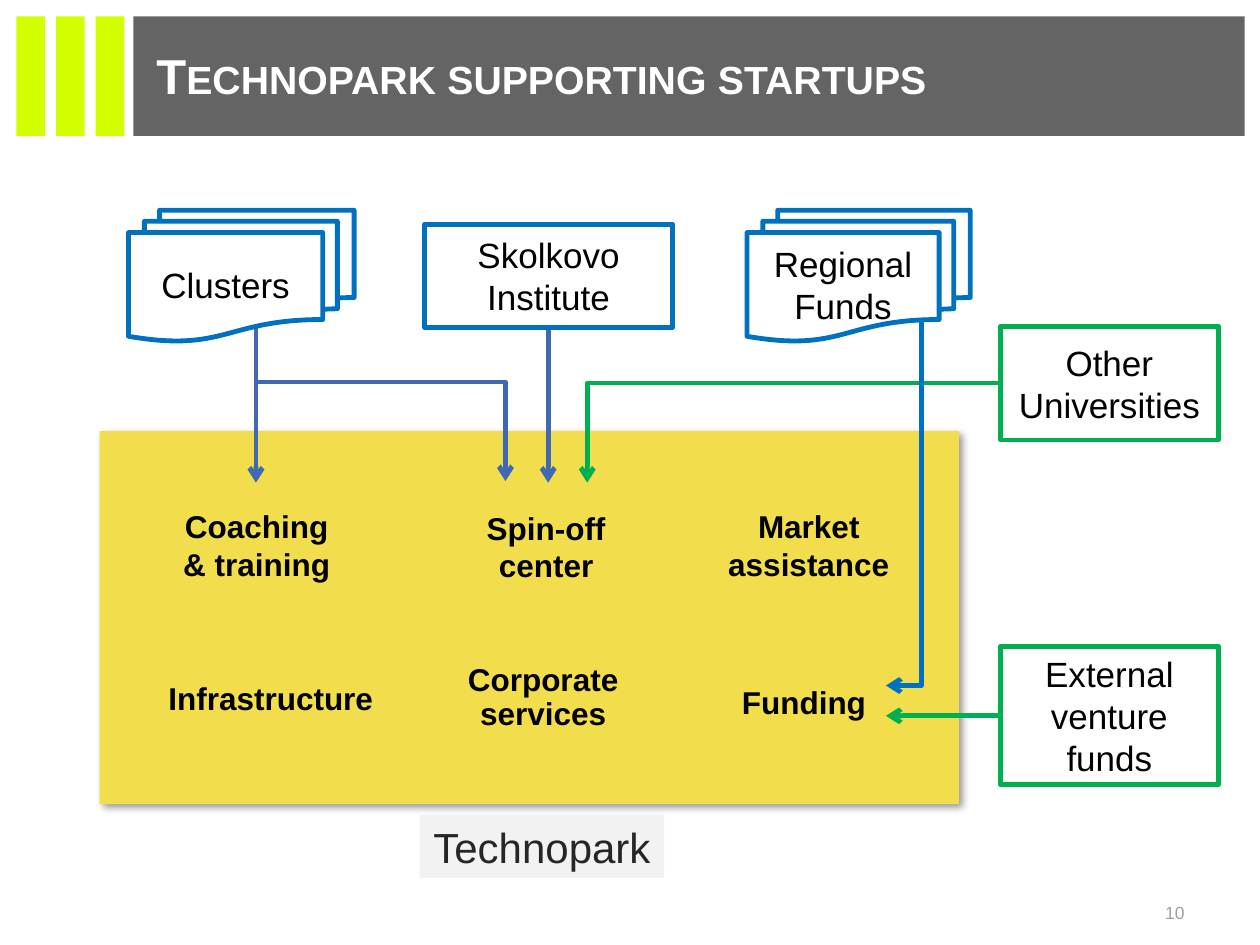
from lxml import etree
from pptx import Presentation
from pptx.dml.color import RGBColor
from pptx.enum.shapes import MSO_CONNECTOR, MSO_SHAPE
from pptx.enum.text import MSO_ANCHOR, PP_ALIGN
from pptx.oxml.ns import qn
from pptx.util import Cm, Pt

RECTANGLE, STACK = MSO_SHAPE.RECTANGLE, MSO_SHAPE.FLOWCHART_MULTIDOCUMENT
STRAIGHT, ELBOW = MSO_CONNECTOR.STRAIGHT, MSO_CONNECTOR.ELBOW
LEFT, CENTER, RIGHT = PP_ALIGN.LEFT, PP_ALIGN.CENTER, PP_ALIGN.RIGHT
MIDDLE = MSO_ANCHOR.MIDDLE

WHITE = RGBColor(0xFF, 0xFF, 0xFF)
BLACK = RGBColor(0, 0, 0)
HEADER_GRAY = RGBColor(0x64, 0x64, 0x64)
LIME = RGBColor(0xD2, 0xFF, 0x00)
YELLOW = RGBColor(0xF2, 0xDE, 0x4C)
BLUE = RGBColor(0x00, 0x70, 0xC0)
ARROW_BLUE = RGBColor(0x3F, 0x69, 0xB2)
GREEN = RGBColor(0x00, 0xB0, 0x50)
CAPTION_FILL = RGBColor(0xF2, 0xF2, 0xF2)
CAPTION_TEXT = RGBColor(0x26, 0x26, 0x26)
NUMBER_GRAY = RGBColor(0x9F, 0xA1, 0xA0)

FONT = "Arial"
LINE_WIDTH = Pt(2.75)

# Positions are (left, top, width, height) in centimetres.
TITLE = "Technopark supporting startups"
TITLE_AREA = (2.9, 0.53, 21.23, 1.96)
HEADER = (2.69, 0.33, 22.4, 2.41)
BARS, BAR_WIDTH, BAR_STEP = 3, 0.58, 0.8
PARK = (2.01, 8.69, 17.32, 7.52)
CAPTION = ("Technopark", (8.46, 16.43, 4.93, 1.27))
PAGE_NUMBER = ("10", (18.21, 18.14, 5.92, 0.53))

PARTNERS = [
    (["External venture funds"], RECTANGLE, (20.17, 13.03, 4.39, 2.79), GREEN),
    (["Other", "Universities"], RECTANGLE, (20.17, 6.58, 4.39, 2.29), GREEN),
    (["Regional Funds"], STACK, (15.06, 4.24, 4.5, 2.64), BLUE),
    (["Skolkovo Institute"], RECTANGLE, (8.56, 4.52, 5, 2.08), BLUE),
    (["Clusters"], STACK, (2.59, 4.24, 4.55, 2.64), BLUE),
]
SERVICES = [
    ("Coaching & training", (3.18, 9.98, 3.99, 2.01), 1),
    ("Spin-off center", (9.12, 10.01, 3.78, 2.01), 1),
    ("Market assistance", (14.3, 9.98, 4.01, 2.01), 1),
    ("Infrastructure", (3.07, 12.85, 4.78, 2.54), 0.9),
    ("Corporate services", (8.56, 12.8, 4.78, 2.54), 0.9),
    ("Funding", (13.82, 12.93, 4.78, 2.54), 0.9),
]
# Start, end, colour
STRAIGHT_ARROWS = [
    ((5.16, 6.58), (5.16, 9.73), ARROW_BLUE),
    ((11.05, 6.58), (11.05, 9.73), ARROW_BLUE),
    ((20.17, 14.43), (17.86, 14.43), GREEN),
]
SIDEWAYS_THEN_DOWN = [
    ((5.18, 7.7), (10.19, 9.7), ARROW_BLUE),
    ((20.17, 7.72), (11.84, 9.73), GREEN),
]
DOWN_THEN_LEFT = ((18.57, 6.43), (17.86, 13.82), BLUE)


def cm(values):
    return [Cm(value) for value in values]


def write(shape, lines, size, color, bold=False, align=CENTER, spacing=None):
    frame = shape.text_frame
    frame.word_wrap = True
    frame.vertical_anchor = MIDDLE
    frame.text = "\n".join(lines)
    for paragraph in frame.paragraphs:
        paragraph.alignment = align
        paragraph.line_spacing = spacing
        font = paragraph.font
        font.name, font.size, font.bold = FONT, Pt(size), bold
        font.color.rgb = color
    return frame


def add_block(page, area, fill, kind=RECTANGLE, line=None):
    shape = page.shapes.add_shape(kind, *cm(area))
    shape.shadow.inherit = False
    shape.fill.solid()
    shape.fill.fore_color.rgb = fill
    if line is None:
        shape.line.fill.background()
    else:
        shape.line.color.rgb = line
        shape.line.width = LINE_WIDTH
    return shape


def add_soft_shadow(shape):
    effects = shape._element.spPr.find(qn("a:effectLst"))
    shadow = etree.SubElement(effects, qn("a:outerShdw"), blurRad=str(Pt(4)),
                              dist=str(Pt(3)), dir="2700000", rotWithShape="0")
    color = etree.SubElement(shadow, qn("a:srgbClr"), val="000000")
    etree.SubElement(color, qn("a:alpha"), val="40000")


def add_arrow(page, start, end, color, kind=STRAIGHT):
    arrow = page.shapes.add_connector(kind, *cm(start + end))
    arrow.line.color.rgb = color
    arrow.line.width = LINE_WIDTH
    properties = arrow._element.spPr
    etree.SubElement(properties.find(qn("a:ln")), qn("a:tailEnd"), type="arrow")
    etree.SubElement(properties, qn("a:effectLst"))
    if kind == ELBOW:
        properties.find(qn("a:prstGeom")).set("prst", "bentConnector2")
    return arrow


def add_down_then_left(page, start, end, color):
    """Add an elbow arrow drawn flat about its centre, then turned 90 degrees."""
    (x1, y1), (x2, y2) = start, end
    center_x, center_y = (x1 + x2) / 2, (y1 + y2) / 2
    half_width, half_height = (y2 - y1) / 2, (x1 - x2) / 2
    arrow = add_arrow(page, (center_x - half_width, center_y - half_height),
                      (center_x + half_width, center_y + half_height), color, ELBOW)
    arrow._element.spPr.find(qn("a:xfrm")).set("rot", "5400000")


def add_header(page):
    add_block(page, HEADER, HEADER_GRAY)
    left, top, height = 0.33, HEADER[1], HEADER[3]
    for index in range(BARS):
        add_block(page, (left + index * BAR_STEP, top, BAR_WIDTH, height), LIME)
    title = page.shapes.title
    title.left, title.top, title.width, title.height = cm(TITLE_AREA)
    frame = write(title, [TITLE], 28, WHITE, bold=True, align=LEFT)
    frame.paragraphs[0].font._element.set("cap", "small")
    page.shapes._spTree.append(title._element)


def main():
    deck = Presentation()
    deck.slide_width, deck.slide_height = Cm(25.4), Cm(19.05)
    page = deck.slides.add_slide(deck.slide_layouts[5])

    add_header(page)
    add_soft_shadow(add_block(page, PARK, YELLOW))
    for start, end, color in STRAIGHT_ARROWS:
        add_arrow(page, start, end, color)

    for lines, kind, area, color in PARTNERS:
        write(add_block(page, area, WHITE, kind, color), lines, 20, BLACK)

    caption, area = CAPTION
    write(add_block(page, area, CAPTION_FILL), [caption], 24, CAPTION_TEXT)
    number, area = PAGE_NUMBER
    write(page.shapes.add_textbox(*cm(area)), [number], 10, NUMBER_GRAY, align=RIGHT)
    for label, area, spacing in SERVICES:
        box = page.shapes.add_textbox(*cm(area))
        write(box, [label], 18, BLACK, bold=True, spacing=spacing)

    for start, end, color in SIDEWAYS_THEN_DOWN:
        add_arrow(page, start, end, color, ELBOW)
    add_down_then_left(page, *DOWN_THEN_LEFT)
    deck.save("out.pptx")


if __name__ == "__main__":
    main()
